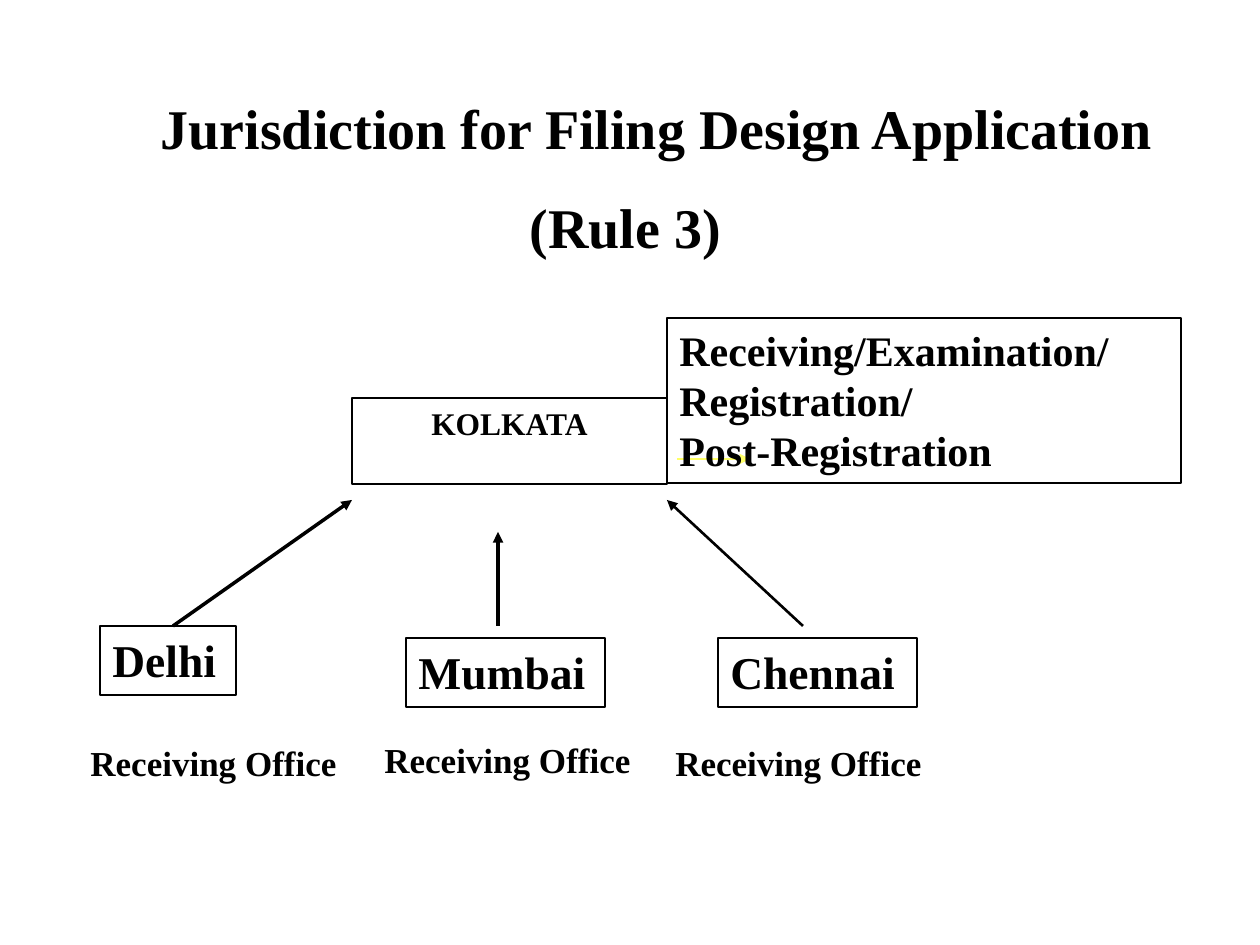
"""Build the slide on jurisdiction for filing a design application."""
from lxml.etree import SubElement
from pptx import Presentation
from pptx.dml.color import RGBColor
from pptx.enum.shapes import MSO_CONNECTOR as Connector, MSO_SHAPE as Shape
from pptx.enum.text import MSO_ANCHOR as Anchor, PP_ALIGN as Align
from pptx.oxml.ns import qn
from pptx.util import Pt

PX = 914400 / 126
FONT = "Times New Roman"
COLORS = {"ink": "000000", "accent": "FFFF66"}

TITLE = ((15, 66, 1221, 208), ["Jurisdiction for Filing Design Application", "(Rule 3)"])
HEAD_OFFICE = ("KOLKATA", (352, 398, 315, 86), 18, Align.CENTER)
FUNCTIONS = ("Receiving/Examination/\vRegistration/\vPost-Registration",
             (667, 318, 514, 165), 24, Align.LEFT)
CITIES = [
    ("Delhi", (100, 626, 136, 69)),
    ("Chennai", (718, 638, 199, 69)),
    ("Mumbai", (406, 638, 199, 69)),
]
ROLE = "Receiving Office"
ROLE_PLACES = [(78, 735, 284, 54), (372, 732, 305, 54), (663, 735, 305, 117)]
FUNCTION_ARROW = ((677, 459), (750, 459), "accent", 0.75)
CITY_ARROWS = [
    ((173, 626), (352, 500), "ink", 2),
    ((803, 626), (667, 500), "ink", 1.5),
    ((498, 626), (498, 532), "ink", 2),
]


def emu(lengths):
    return [round(length * PX) for length in lengths]


def color(name):
    return RGBColor.from_string(COLORS[name])


def style_paragraph(paragraph, size, align):
    paragraph.alignment = align
    spacing = SubElement(paragraph._p.get_or_add_pPr(), qn("a:spcBef"))
    SubElement(spacing, qn("a:spcPct")).set("val", "50000")
    font = paragraph.font
    font.name, font.size, font.bold = FONT, Pt(size), True
    font.color.rgb = color("ink")


def fill_text(shape, text, size, align):
    frame = shape.text_frame
    frame.word_wrap = True
    frame.vertical_anchor = Anchor.TOP
    frame.text = text
    for paragraph in frame.paragraphs:
        style_paragraph(paragraph, size, align)


def add_box(slide, text, place, size, align):
    box = slide.shapes.add_shape(Shape.RECTANGLE, *emu(place))
    box.shadow.inherit = False
    box.fill.background()
    box.line.color.rgb = color("ink")
    box.line.width = Pt(0.75)
    fill_text(box, text, size, align)


def add_label(slide, text, place, size, align):
    label = slide.shapes.add_textbox(*emu(place))
    fill_text(label, text, size, align)
    return label


def add_title(slide, place, lines):
    title = add_label(slide, "\n".join(lines), place, 32, Align.CENTER)
    run = title.text_frame.paragraphs[0].runs[0]
    run.text = "\t"
    run.font.size = Pt(44)
    title.text_frame.paragraphs[0].add_run().text = lines[0]


def add_arrow(slide, start, end, color_name, width):
    arrow = slide.shapes.add_connector(Connector.STRAIGHT, *emu(start + end))
    arrow.line.color.rgb = color(color_name)
    arrow.line.width = Pt(width)
    SubElement(arrow.line._get_or_add_ln(), qn("a:tailEnd")).set("type", "triangle")
    SubElement(arrow._element.spPr, qn("a:effectLst"))


def main():
    presentation = Presentation()
    presentation.slide_width, presentation.slide_height = emu((1260, 945))
    slide = presentation.slides.add_slide(presentation.slide_layouts[6])
    add_title(slide, *TITLE)
    add_box(slide, *HEAD_OFFICE)
    add_arrow(slide, *FUNCTION_ARROW)
    add_box(slide, *FUNCTIONS)
    for city, place in CITIES:
        add_box(slide, city, place, 26, Align.LEFT)
    for place in ROLE_PLACES:
        add_label(slide, ROLE, place, 20, Align.LEFT)
    for arrow in CITY_ARROWS:
        add_arrow(slide, *arrow)
    presentation.save("out.pptx")


if __name__ == "__main__":
    main()
